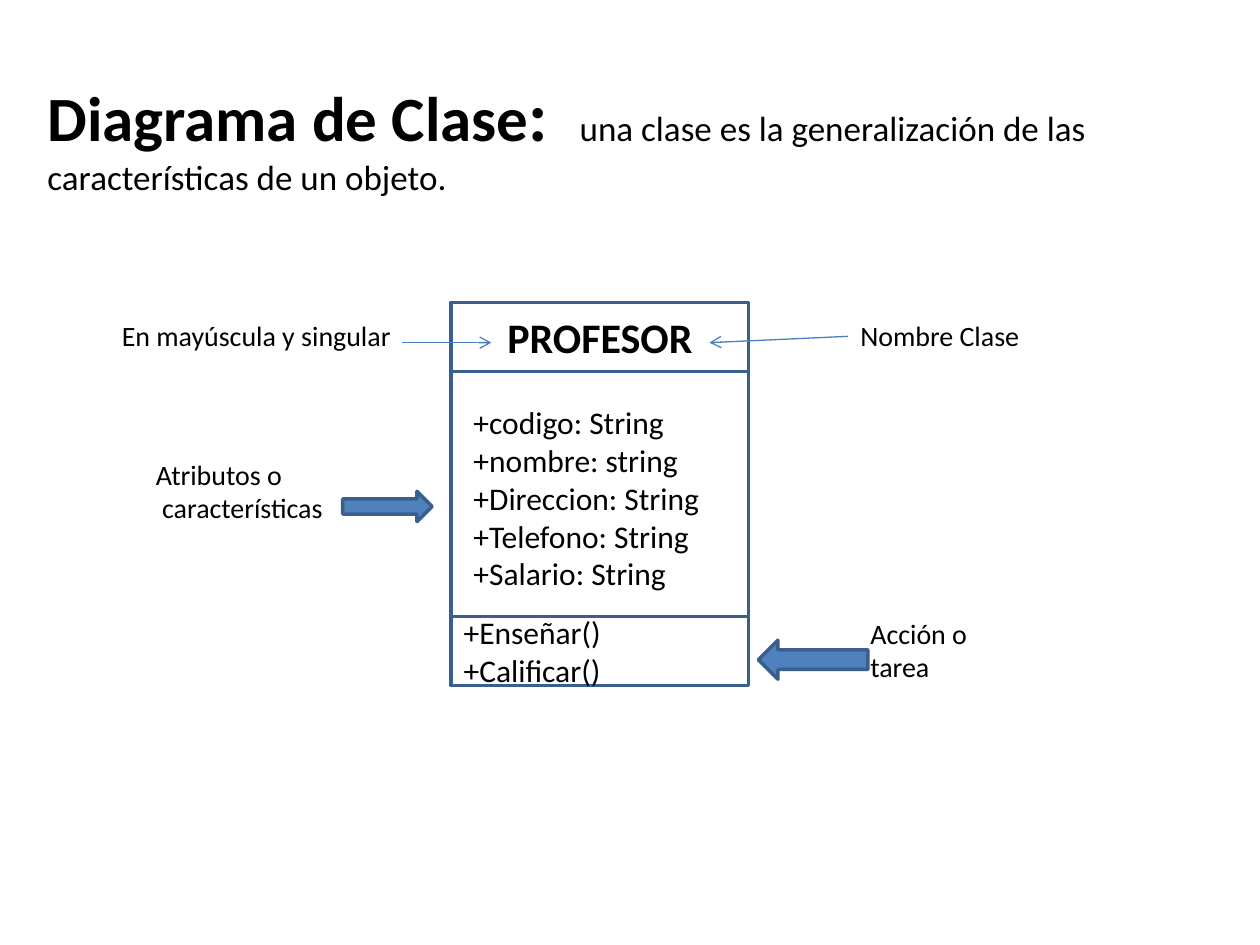
from dataclasses import dataclass

from lxml.etree import SubElement
from pptx import Presentation
from pptx.dml.color import RGBColor
from pptx.enum.shapes import MSO_CONNECTOR, MSO_SHAPE
from pptx.enum.text import MSO_ANCHOR, MSO_AUTO_SIZE, PP_ALIGN
from pptx.oxml.ns import qn
from pptx.util import Pt


@dataclass(frozen=True)
class Theme:
    font: str = "Calibri"
    text: str = "000000"
    paper: str = "FFFFFF"
    accent: str = "4F81BD"
    outline: str = "3A5F8C"
    pointer: str = "4B7EBC"
    title: int = 36
    colon: int = 40
    subtitle: int = 20
    class_name: int = 24
    member: int = 18
    label: int = 16


class ClassDiagram:
    """Draw the parts of a class diagram on one page in a shared theme."""

    def __init__(self, page, theme):
        self.page = page
        self.theme = theme

    def add_span(self, paragraph, text, size, bold=False, spacing=0):
        span = paragraph.add_run()
        span.text = text
        formats = {"name": self.theme.font, "size": Pt(size), "bold": bold}
        for name, value in formats.items():
            setattr(span.font, name, value)
        span.font.color.rgb = RGBColor.from_string(self.theme.text)
        if spacing:
            span._r.get_or_add_rPr().set("spc", str(spacing * 100))

    def add_paragraphs(self, frame, lines, size, bold=False, align=PP_ALIGN.LEFT):
        for index, line in enumerate(lines):
            paragraph = frame.add_paragraph() if index else frame.paragraphs[0]
            paragraph.alignment = align
            self.add_span(paragraph, line, size, bold)

    def text_box(self, bounds, lines=(), size=0):
        box = self.page.shapes.add_textbox(*map(Pt, bounds))
        formats = {"word_wrap": True, "auto_size": MSO_AUTO_SIZE.SHAPE_TO_FIT_TEXT}
        for name, value in formats.items():
            setattr(box.text_frame, name, value)
        self.add_paragraphs(box.text_frame, lines, size)
        return box

    def heading(self, bounds, title, subtitle):
        paragraph = self.text_box(bounds).text_frame.paragraphs[0]
        self.add_span(paragraph, title, self.theme.title, bold=True)
        self.add_span(paragraph, ":", self.theme.colon, bold=True)
        self.add_span(paragraph, " ", self.theme.colon, bold=True, spacing=9)
        self.add_span(paragraph, subtitle, self.theme.subtitle)

    def shape(self, kind, bounds, fill):
        shape = self.page.shapes.add_shape(kind, *map(Pt, bounds))
        shape.shadow.inherit = False
        shape.fill.solid()
        shape.fill.fore_color.rgb = RGBColor.from_string(fill)
        shape.line.color.rgb = RGBColor.from_string(self.theme.outline)
        shape.line.width = Pt(2)
        return shape

    def compartment(self, bounds, lines=(), **style):
        box = self.shape(MSO_SHAPE.RECTANGLE, bounds, self.theme.paper)
        box.text_frame.word_wrap = True
        box.text_frame.vertical_anchor = MSO_ANCHOR.MIDDLE
        self.add_paragraphs(box.text_frame, lines, **style)

    def block_arrow(self, kind, bounds):
        self.shape(kind, bounds, self.theme.accent)

    def pointer(self, start, end):
        connector = self.page.shapes.add_connector(
            MSO_CONNECTOR.STRAIGHT, *map(Pt, (*start, *end))
        )
        connector.line.color.rgb = RGBColor.from_string(self.theme.pointer)
        connector.line.width = Pt(0.75)
        properties = connector._element.spPr
        SubElement(properties.find(qn("a:ln")), qn("a:tailEnd"), type="arrow")
        SubElement(properties, qn("a:effectLst"))


def main():
    deck = Presentation()
    deck.slide_width, deck.slide_height = Pt(720), Pt(540)
    theme = Theme()
    diagram = ClassDiagram(deck.slides.add_slide(deck.slide_layouts[6]), theme)

    left, top, width, band = 257.8, 172.8, 170, 39.6
    diagram.compartment((left, top, width, 181.4), size=theme.member)
    diagram.compartment(
        (left, top, width, band), ["PROFESOR"],
        size=theme.class_name, bold=True, align=PP_ALIGN.CENTER,
    )
    diagram.heading(
        (20, 37.5, 657.5, 80),
        "Diagrama de Clase",
        "una clase es la generalización de las características de un objeto.",
    )
    attributes = [
        "+codigo: String", "+nombre: string", "+Direccion: String",
        "+Telefono: String", "+Salario: String",
    ]
    diagram.text_box((263.5, 226.8, 160.5, 116.6), attributes, theme.member)
    diagram.compartment(
        (left, 352.2, width, band), ["+Enseñar()", "+Calificar()"], size=theme.member
    )

    labels = [
        ((62.6, 178.6, 175.7, 26.6), ["En mayúscula y singular"]),
        ((484.6, 178.6, 175.7, 26.6), ["Nombre Clase"]),
        ((82, 257.8, 113, 46), ["Atributos o", " características"]),
        ((490.3, 348.5, 79.2, 46), ["Acción o", "tarea"]),
    ]
    for bounds, lines in labels:
        diagram.text_box(bounds, lines, theme.label)

    diagram.pointer((229.7, 195.8), (280.8, 195.8))
    diagram.pointer((484.6, 192.2), (405.4, 195.8))
    diagram.block_arrow(MSO_SHAPE.RIGHT_ARROW, (195.8, 280.8, 51.1, 17.3))
    diagram.block_arrow(MSO_SHAPE.LEFT_ARROW, (433.4, 365.8, 62.6, 22.3))
    deck.save("out.pptx")


if __name__ == "__main__":
    main()
